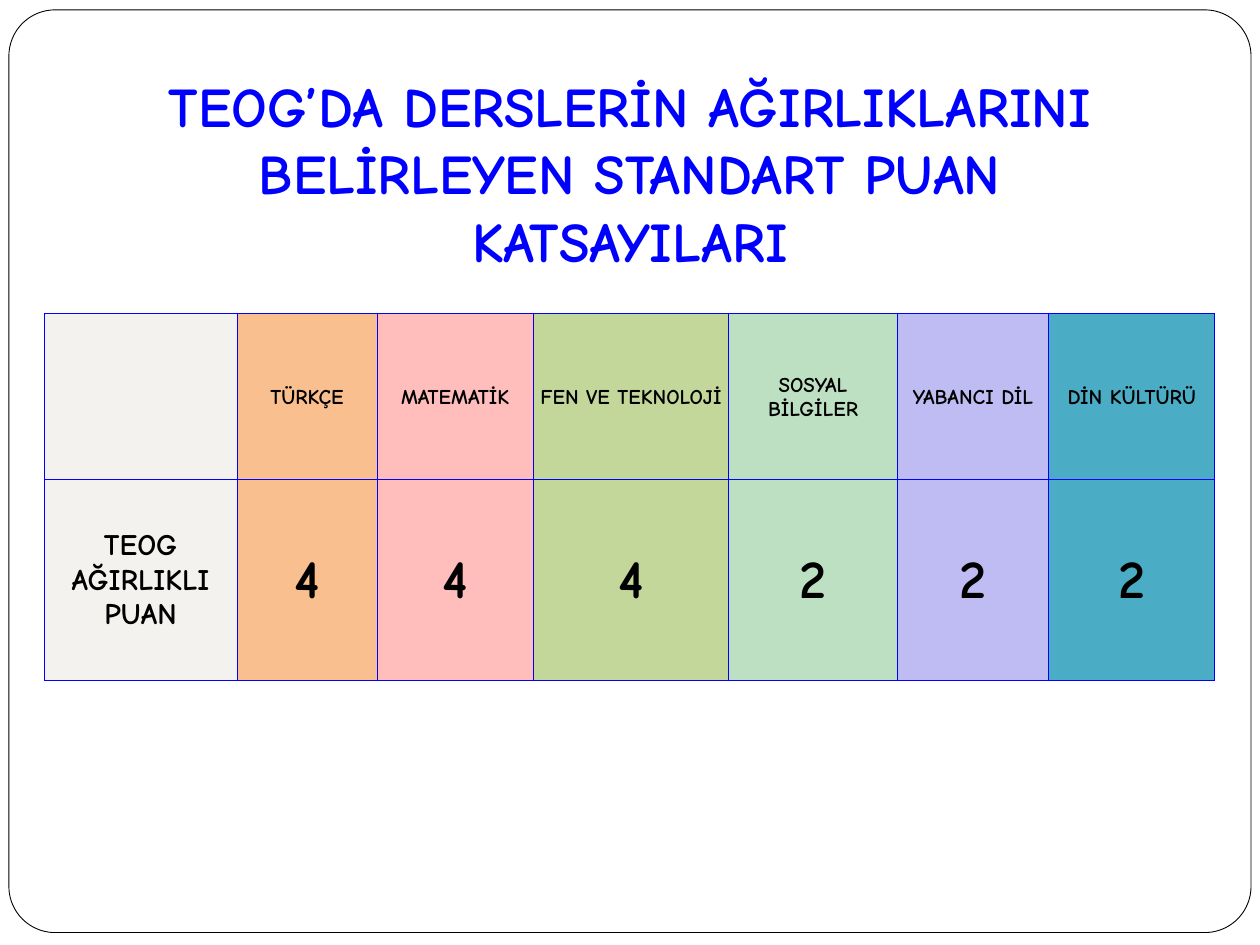
from dataclasses import dataclass

from lxml.etree import SubElement
from pptx import Presentation
from pptx.dml.color import RGBColor
from pptx.enum.shapes import MSO_SHAPE
from pptx.enum.text import MSO_ANCHOR, PP_ALIGN
from pptx.oxml.ns import qn
from pptx.util import Cm, Pt


@dataclass(frozen=True)
class Theme:
    font: str = "Comic Neue"
    blue: str = "0000FF"
    black: str = "000000"
    white: str = "FFFFFF"
    cols: tuple = ("F4F2EE", "FABF8F", "FFBEBC", "C4D79B",
                   "BDDFC2", "BEBCF3", "4BACC6")
    title: int = 32
    head: int = 12
    label: int = 17
    score: int = 31
    line: float = 0.5


theme = Theme()


def write(frame, text, size, color=theme.black):
    frame.word_wrap = True
    para = frame.paragraphs[0]
    para.alignment = PP_ALIGN.CENTER
    run = para.add_run()
    run.text = text
    run.font.name = theme.font
    run.font.size = Pt(size)
    run.font.bold = True
    run.font.color.rgb = RGBColor.from_string(color)


def paint(cell, color):
    props = cell._tc.get_or_add_tcPr()
    for side in ("a:lnL", "a:lnR", "a:lnT", "a:lnB"):
        line = SubElement(props, qn(side), w=str(Pt(theme.line)))
        fill = SubElement(line, qn("a:solidFill"))
        SubElement(fill, qn("a:srgbClr"), val=theme.blue)
    cell.fill.solid()
    cell.fill.fore_color.rgb = RGBColor.from_string(color)


deck = Presentation()
deck.slide_width, deck.slide_height = Cm(25.4), Cm(19.05)
slide = deck.slides.add_slide(deck.slide_layouts[6])

# Rounded page frame
page = slide.shapes.add_shape(MSO_SHAPE.ROUNDED_RECTANGLE,
                              Cm(0.18), Cm(0.2), Cm(25.04), Cm(18.6))
page.adjustments[0] = 0.05
page.shadow.inherit = False
page.fill.solid()
page.fill.fore_color.rgb = RGBColor.from_string(theme.white)
page.line.color.rgb = RGBColor.from_string(theme.black)
page.line.width = Pt(theme.line)

# Title
title = slide.shapes.add_textbox(Cm(2.1), Cm(1.32), Cm(21.2), Cm(4.37))
write(title.text_frame,
      "TEOG’DA DERSLERİN AĞIRLIKLARINI BELİRLEYEN STANDART PUAN KATSAYILARI",
      size=theme.title, color=theme.blue)

# Score table
rows = [
    ("", "TÜRKÇE", "MATEMATİK", "FEN VE TEKNOLOJİ",
     "SOSYAL BİLGİLER", "YABANCI DİL", "DİN KÜLTÜRÜ"),
    ("TEOG AĞIRLIKLI PUAN", "4", "4", "4", "2", "2", "2"),
]
wide = [3.89, 2.82, 3.15, 3.94, 3.4, 3.05, 3.35]
high = [3.35, 4.04]
grid = slide.shapes.add_table(len(rows), len(wide), Cm(0.89), Cm(6.32),
                              Cm(sum(wide)), Cm(sum(high))).table
for col, width in zip(grid.columns, wide):
    col.width = Cm(width)
for row, height in zip(grid.rows, high):
    row.height = Cm(height)

for r, texts in enumerate(rows):
    for c, text in enumerate(texts):
        cell = grid.cell(r, c)
        cell.vertical_anchor = MSO_ANCHOR.MIDDLE
        cell.margin_left = cell.margin_right = cell.margin_top = Cm(0.03)
        cell.margin_bottom = 0
        paint(cell, theme.cols[c])
        if text:
            size = theme.head if r == 0 else theme.label if c == 0 else theme.score
            write(cell.text_frame, text, size=size)

deck.save("out.pptx")
